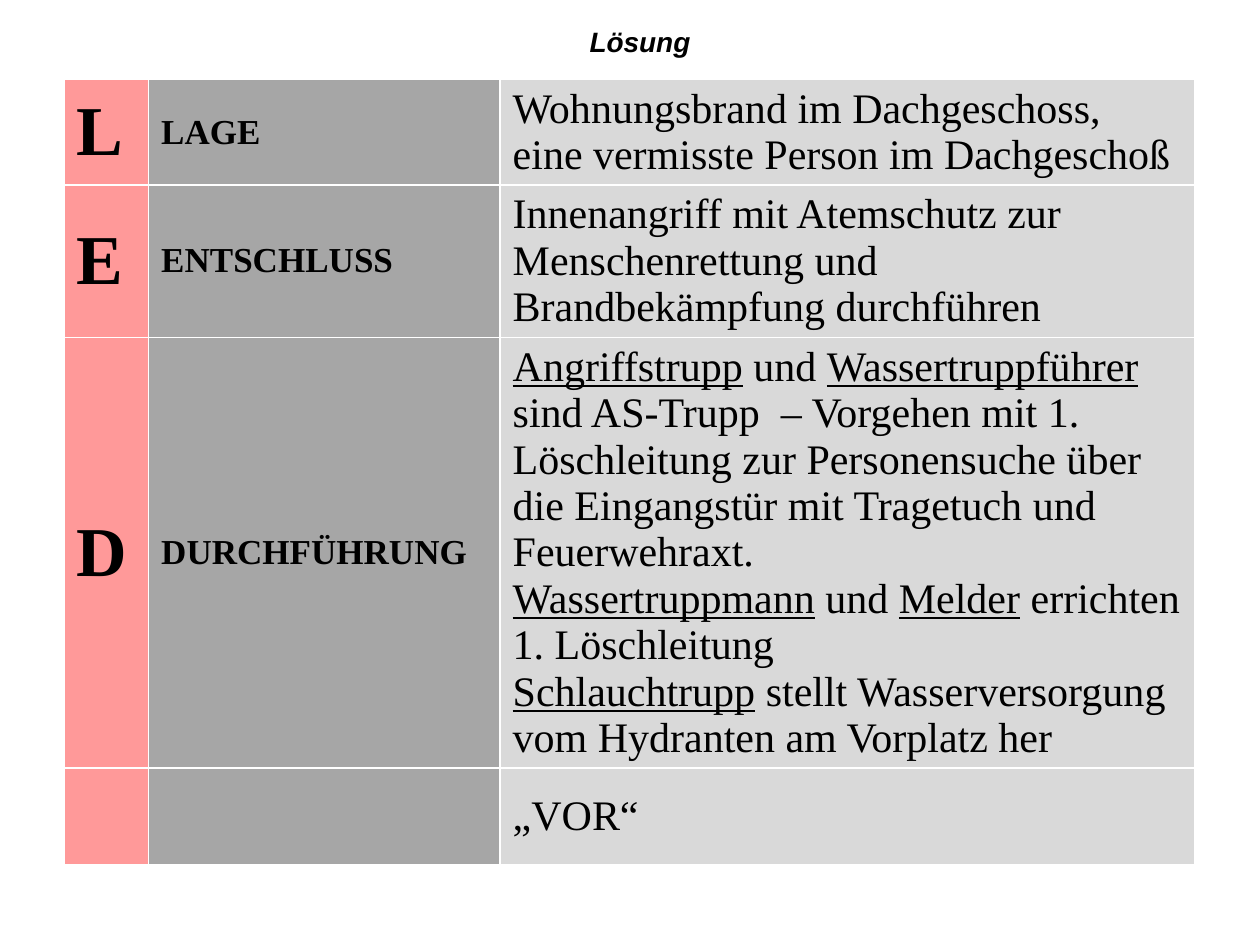
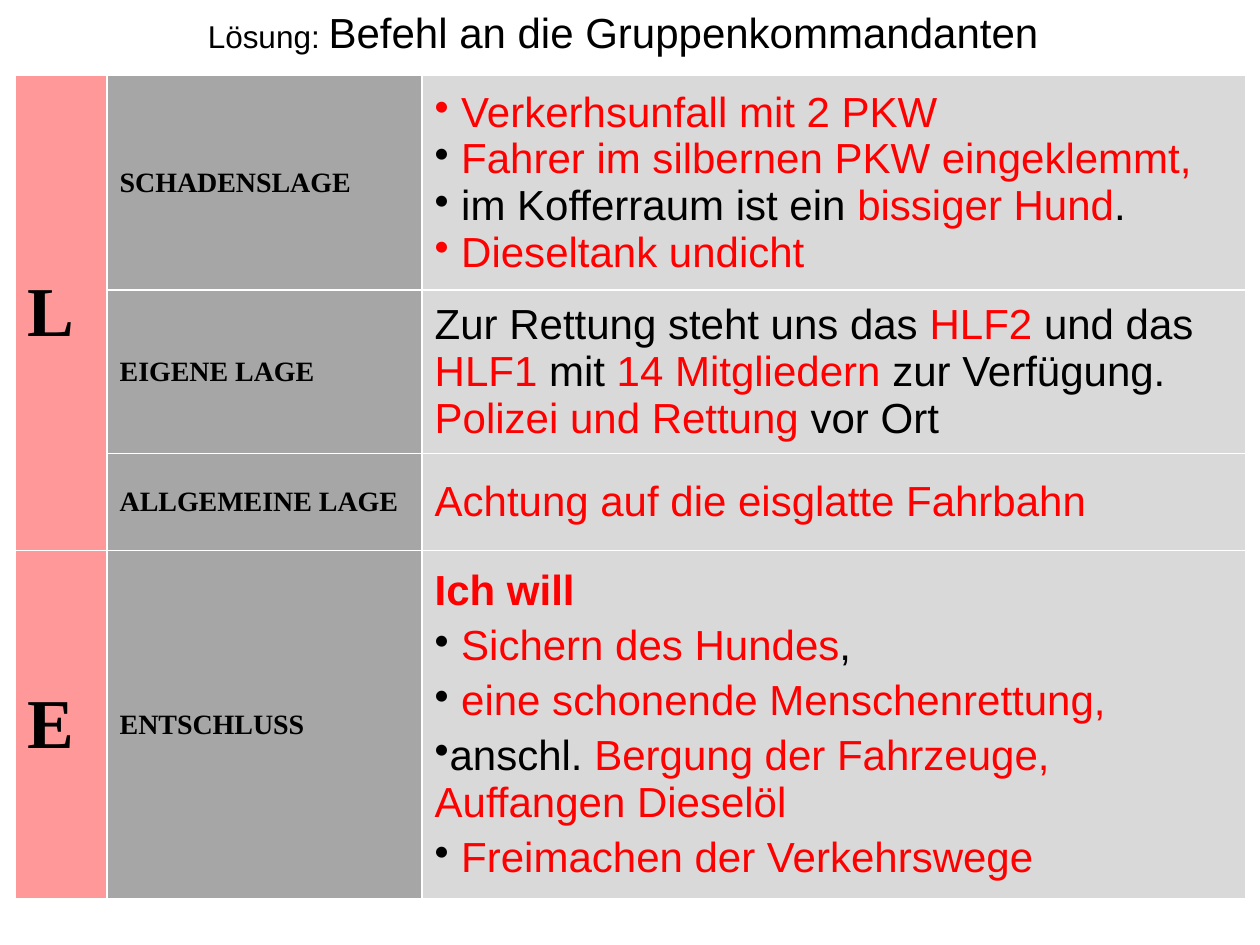
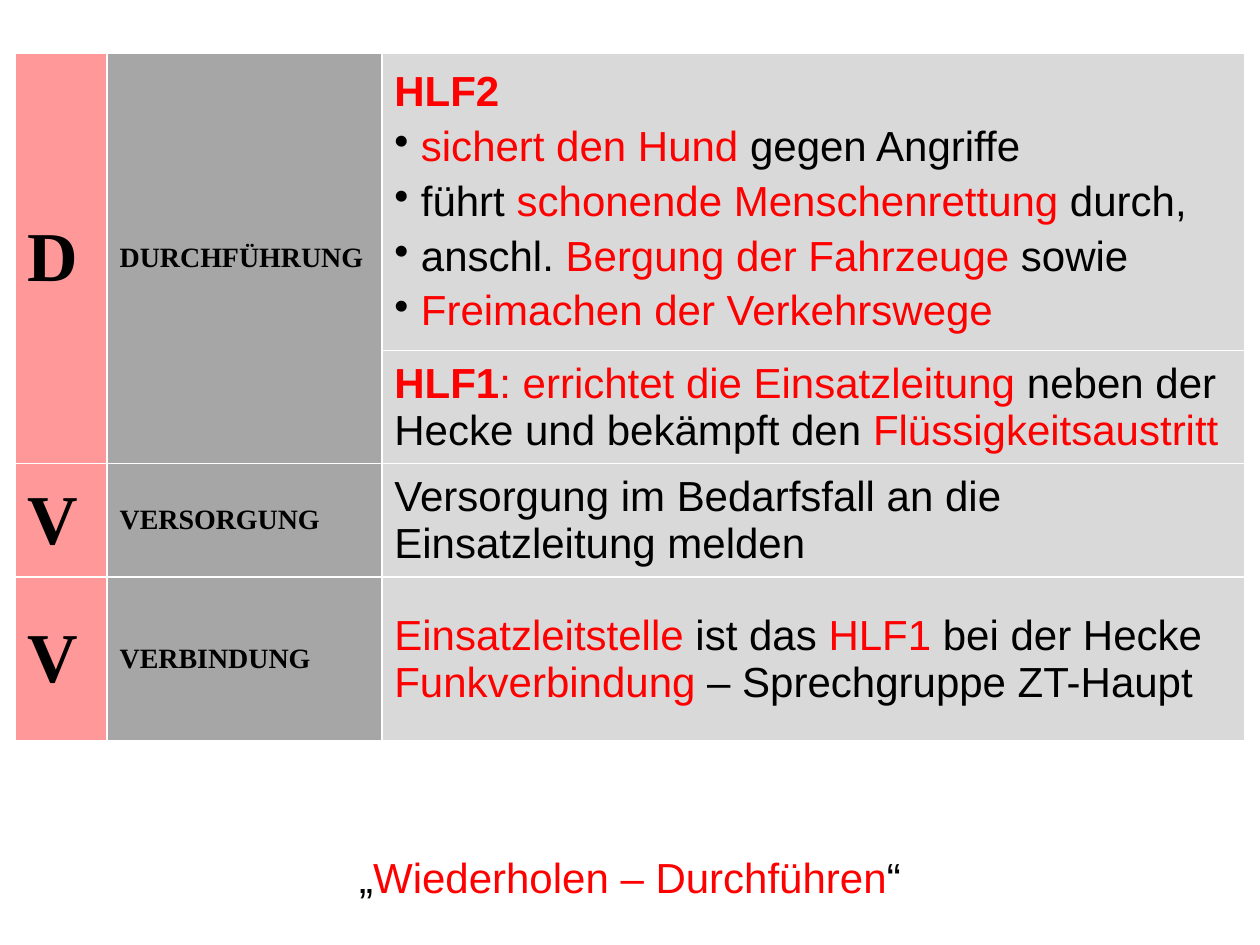
import pptx
import pptx.dml.color
import pptx.enum.shapes
import pptx.enum.text
import pptx.oxml
import pptx.oxml.ns
import pptx.util

Inches = pptx.util.Inches
Pt = pptx.util.Pt
RGBColor = pptx.dml.color.RGBColor
ANCHOR = pptx.enum.text.MSO_ANCHOR
CENTER = pptx.enum.text.PP_ALIGN.CENTER

BLACK = RGBColor(0x00, 0x00, 0x00)
RED = RGBColor(0xFF, 0x00, 0x00)
WHITE = RGBColor(0xFF, 0xFF, 0xFF)
PINK = RGBColor(0xFF, 0x99, 0x99)
DARK_GREY = RGBColor(0xA6, 0xA6, 0xA6)
LIGHT_GREY = RGBColor(0xD9, 0xD9, 0xD9)
COLUMN_FILLS = (PINK, DARK_GREY, LIGHT_GREY)

SANS = "Arial"
SERIF = "Times New Roman"
BULLET = "•"
LIST_GAP = 4.6
BORDER = (
    '<a:{side} {namespace} w="12700"><a:solidFill><a:srgbClr val="{color}"/>'
    "</a:solidFill></a:{side}>"
)


def red(text):
    return text, {"color": RED}


def bold_red(text):
    return text, {"color": RED, "bold": True}


def underlined(text):
    return text, {"underline": True}


SOLUTION = {
    "left": 0.51, "top": 0.63, "columns": (0.67, 2.79, 5.51),
    "label_size": 20, "body_font": SERIF,
    "rows": [
        (0.83, "L", "LAGE", 0, [
            ["Wohnungsbrand im Dachgeschoss,"],
            ["eine vermisste Person im Dachgeschoß"],
        ]),
        (1.21, "E", "ENTSCHLUSS", 0, [
            ["Innenangriff mit Atemschutz zur Menschenrettung und"],
            ["Brandbekämpfung durchführen"],
        ]),
        (3.42, "D", "DURCHFÜHRUNG", 0, [
            [underlined("Angriffstrupp"), " und ", underlined("Wassertruppführer"),
             " sind AS-Trupp  – Vorgehen mit 1. Löschleitung zur Personensuche "
             "über die Eingangstür mit Tragetuch und Feuerwehraxt."],
            [underlined("Wassertruppmann"), " und ", underlined("Melder"),
             " errichten 1. Löschleitung"],
            [underlined("Schlauchtrupp"),
             " stellt Wasserversorgung vom Hydranten am Vorplatz her"],
        ]),
        (0.77, "", "", 0, [["„VOR“"]]),
    ],
}

SITUATION = {
    "left": 0.12, "top": 0.6, "columns": (0.73, 2.5, 6.54),
    "label_size": 16, "body_font": SANS,
    "rows": [
        (1.7, "L", "SCHADENSLAGE", 0, [
            [BULLET, red(" Verkerhsunfall mit 2 PKW")],
            [BULLET, " ", red("Fahrer im silbernen PKW eingeklemmt,")],
            [BULLET, " im Kofferraum ist ein ", red("bissiger Hund"), "."],
            [BULLET, red(" Dieseltank undicht")],
        ]),
        (1.3, None, "EIGENE LAGE", 0, [
            ["Zur Rettung steht uns das", red(" HLF2 "), "und das", red(" HLF1 "),
             "mit", red(" 14 Mitgliedern "), "zur Verfügung. ",
             red("Polizei und Rettung "), "vor Ort"],
        ]),
        (0.77, None, "ALLGEMEINE LAGE", 0, [
            [red("Achtung auf die eisglatte Fahrbahn")],
        ]),
        (2.76, "E", "ENTSCHLUSS", LIST_GAP, [
            [bold_red("Ich will")],
            [BULLET, " ", red("Sichern des Hundes"), ","],
            [BULLET, " ", red("eine schonende Menschenrettung,")],
            [BULLET, "anschl. ", red("Bergung der Fahrzeuge, Auffangen Dieselöl")],
            [BULLET, " ", red("Freimachen der Verkehrswege")],
        ]),
    ],
}

EXECUTION = {
    "left": 0.12, "top": 0.42, "columns": (0.73, 2.18, 6.85),
    "label_size": 16, "body_font": SANS,
    "rows": [
        (2.36, "D", "DURCHFÜHRUNG", LIST_GAP, [
            [bold_red("HLF2")],
            [BULLET, " ", red("sichert den Hund "), "gegen Angriffe"],
            [BULLET, " führt ", red("schonende Menschenrettung"), " durch,"],
            [BULLET, " anschl. ", red("Bergung der Fahrzeuge"), " sowie"],
            [BULLET, " ", red("Freimachen der Verkehrswege")],
        ]),
        (0.9, None, None, 0, [
            [bold_red("HLF1"), red(": errichtet die Einsatzleitung "),
             "neben der Hecke und bekämpft den ", red("Flüssigkeitsaustritt")],
        ]),
        (0.9, "V", "VERSORGUNG", 0, [
            ["Versorgung im Bedarfsfall an die Einsatzleitung melden"],
        ]),
        (1.3, "V", "VERBINDUNG", 0, [
            [red("Einsatzleitstelle"), " ist das ", red("HLF1 "), "bei der Hecke"],
            [red("Funkverbindung "), "– Sprechgruppe ZT-Haupt"],
        ]),
    ],
}

SLIDES = [
    {"table": SOLUTION, "box": (3.58, 0.13, 3, 0.4), "filled": True,
     "runs": [("Lösung", {"size": Pt(16), "bold": True, "italic": True})]},
    {"table": SITUATION, "box": (0.12, 0, 9.65, 0.5), "filled": False,
     "runs": [("Lösung: ", {"size": Pt(18)}), "Befehl an die Gruppenkommandanten"]},
    {"table": EXECUTION, "box": (0.12, 6.71, 9.76, 0.51), "filled": False,
     "runs": ["„", red("Wiederholen – Durchführen"), "“"]},
]


def add_runs(paragraph, runs, base):
    for item in runs:
        text, changes = (item, {}) if isinstance(item, str) else item
        run = paragraph.add_run()
        run.text = text
        for name, value in {**base, **changes}.items():
            if name == "color":
                run.font.color.rgb = value
            else:
                setattr(run.font, name, value)


def add_bullet(paragraph):
    properties = paragraph._p.get_or_add_pPr()
    properties.set("marL", "0")
    properties.set("indent", "0")
    properties.append(pptx.oxml.parse_xml(
        f'<a:buChar {pptx.oxml.ns.nsdecls("a")} char="{BULLET}"/>'))


def fill_frame(frame, paragraphs, base, gap):
    for index, runs in enumerate(paragraphs):
        paragraph = frame.add_paragraph() if index else frame.paragraphs[0]
        paragraph.space_before = Pt(gap if index else 0)
        if runs[0] == BULLET:
            add_bullet(paragraph)
            runs = runs[1:]
        add_runs(paragraph, runs, base)


def format_cell(cell, color):
    cell.fill.solid()
    cell.fill.fore_color.rgb = color
    cell.vertical_anchor = ANCHOR.MIDDLE
    properties = cell._tc.get_or_add_tcPr()
    for index, side in enumerate(("lnL", "lnR", "lnT", "lnB")):
        border = BORDER.format(
            side=side, namespace=pptx.oxml.ns.nsdecls("a"), color=WHITE)
        properties.insert(index, pptx.oxml.parse_xml(border))


def add_order_table(slide, content):
    rows, columns = content["rows"], content["columns"]
    table = slide.shapes.add_table(
        len(rows), len(columns), Inches(content["left"]), Inches(content["top"]),
        Inches(sum(columns)), Inches(sum(row[0] for row in rows))).table
    for column, width in zip(table.columns, columns):
        column.width = Inches(width)

    heading = {"name": SERIF, "color": BLACK, "bold": True}
    bases = (
        {**heading, "size": Pt(40)},
        {**heading, "size": Pt(content["label_size"])},
        {"name": content["body_font"], "color": BLACK, "bold": False, "size": Pt(24)},
    )
    starts = [0, 0]
    for row_index, (height, letter, label, gap, paragraphs) in enumerate(rows):
        table.rows[row_index].height = Inches(height)
        texts = [[[text]] if text else [] for text in (letter, label)] + [paragraphs]
        for column_index, text in enumerate(texts):
            cell = table.cell(row_index, column_index)
            format_cell(cell, COLUMN_FILLS[column_index])
            fill_frame(cell.text_frame, text, bases[column_index], gap)
        for column_index, text in enumerate((letter, label)):
            if text is not None:
                starts[column_index] = row_index
            elif row_index + 1 == len(rows) or rows[row_index + 1][column_index + 1] is not None:
                table.cell(starts[column_index], column_index).merge(
                    table.cell(row_index, column_index))


def add_caption(slide, content):
    box = [Inches(length) for length in content["box"]]
    if content["filled"]:
        shape = slide.shapes.add_shape(
            pptx.enum.shapes.MSO_SHAPE.RECTANGLE, *box)
        shape.shadow.inherit = False
        shape.fill.solid()
        shape.fill.fore_color.rgb = WHITE
        shape.line.fill.background()
    else:
        shape = slide.shapes.add_textbox(*box)
        shape.text_frame.auto_size = pptx.enum.text.MSO_AUTO_SIZE.SHAPE_TO_FIT_TEXT
    frame = shape.text_frame
    frame.word_wrap = True
    frame.vertical_anchor = ANCHOR.MIDDLE if content["filled"] else ANCHOR.TOP
    frame.paragraphs[0].alignment = CENTER
    add_runs(frame.paragraphs[0], content["runs"],
             {"name": SANS, "color": BLACK, "size": Pt(24)})


def main():
    presentation = pptx.Presentation()
    presentation.slide_width = Inches(10)
    presentation.slide_height = Inches(7.5)
    for content in SLIDES:
        slide = presentation.slides.add_slide(presentation.slide_layouts[6])
        add_caption(slide, content)
        add_order_table(slide, content["table"])
    presentation.save("out.pptx")


if __name__ == "__main__":
    main()
